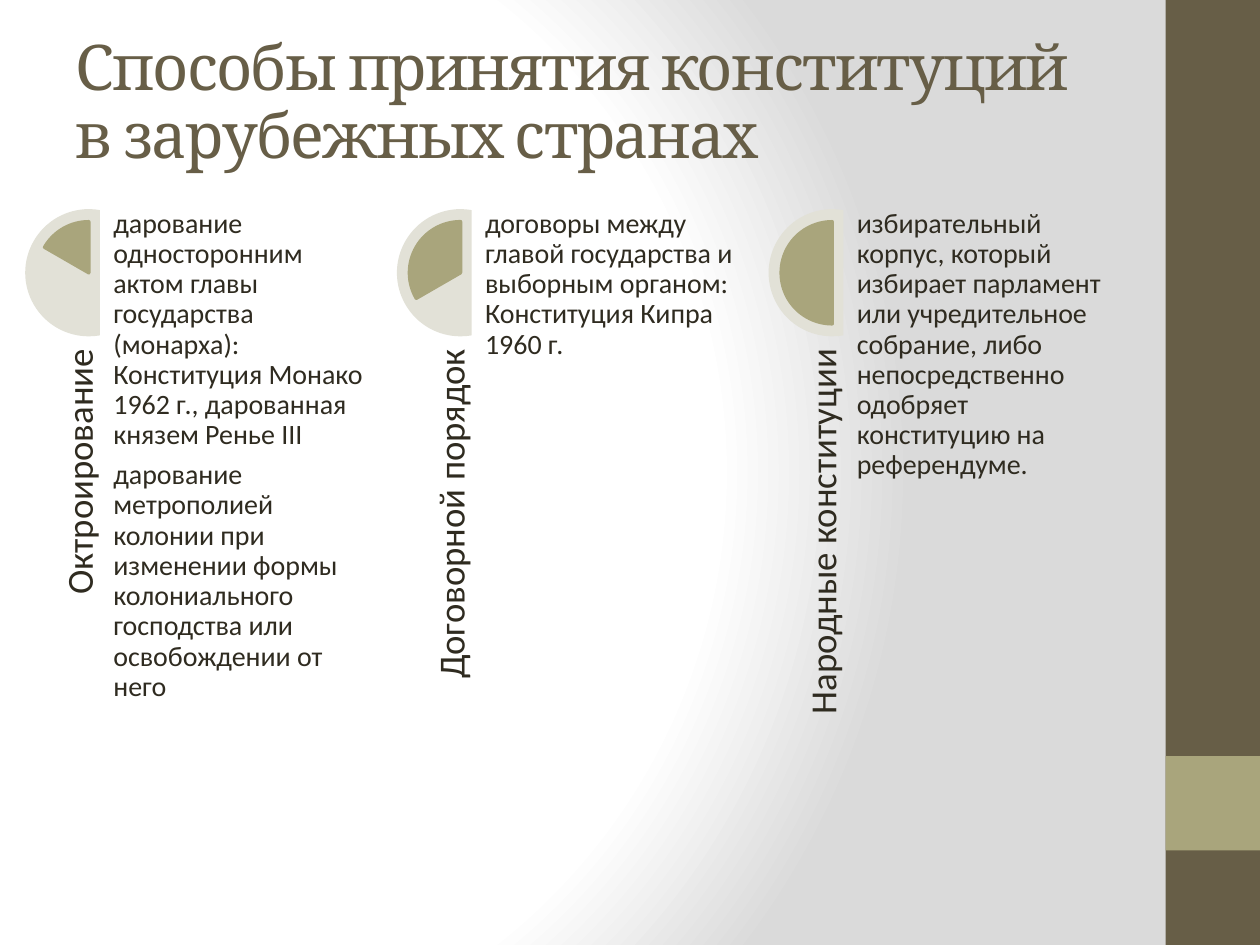
from dataclasses import dataclass

from pptx import Presentation
from pptx.dml.color import RGBColor as RGB
from pptx.enum.shapes import MSO_SHAPE as SHAPE
from pptx.enum.text import MSO_ANCHOR as ANCHOR, PP_ALIGN as ALIGN
from pptx.oxml import parse_xml
from pptx.oxml.ns import nsdecls
from pptx.util import Inches, Pt


@dataclass(frozen=True)
class Theme:
    dark: str = "675E47"
    accent: str = "A9A57C"
    pale: str = "E2E1D7"
    ink: str = "2F2B20"
    bg_stops: tuple = ((0, "FFFFFF"), (75, "FFFFFF"), (100, "DADADA"))
    head_font: str = "Cambria"
    body_font: str = "Calibri"
    title_size: int = 36
    label_size: int = 21
    body_size: int = 16
    leading: float = 0.9
    after: float = 0.35


class Deck:
    """Draws styled elements on the current slide."""

    def __init__(self, theme):
        self.theme = theme
        self.prs = Presentation()
        self.prs.slide_width, self.prs.slide_height = Inches(10), Inches(7.5)
        self.s = None

    def add_slide(self):
        self.s = self.prs.slides.add_slide(self.prs.slide_layouts[6])

    def background(self):
        stops = "".join(
            f'<a:gs pos="{pos * 1000}"><a:srgbClr val="{color}"/></a:gs>'
            for pos, color in self.theme.bg_stops
        )
        bg = parse_xml(
            f'<p:bg {nsdecls("p", "a")}><p:bgPr><a:gradFill rotWithShape="1">'
            f'<a:gsLst>{stops}</a:gsLst><a:path path="circle">'
            '<a:fillToRect l="20000" t="50000" r="100000" b="50000"/></a:path>'
            '</a:gradFill><a:effectLst/></p:bgPr></p:bg>'
        )
        self.s.element.cSld.insert(0, bg)

    def shape(self, kind, box, fill, adj=(), line=None):
        sp = self.s.shapes.add_shape(kind, *map(Inches, box))
        sp.shadow.inherit = False
        sp.fill.solid()
        sp.fill.fore_color.rgb = RGB.from_string(fill)
        for i, value in enumerate(adj):
            sp.adjustments[i] = value
        if line:
            sp.line.color.rgb = RGB.from_string(line)
            sp.line.width = Pt(2)
        else:
            sp.line.fill.background()

    def text(self, box, paragraphs, font, size, color, anchor=ANCHOR.TOP,
             align=ALIGN.LEFT, insets=(0, 0, 0, 0), rotation=0, spacing=0):
        sp = self.s.shapes.add_textbox(*map(Inches, box))
        sp.rotation = rotation
        tf = sp.text_frame
        frame = {"word_wrap": True, "vertical_anchor": anchor}
        sides = ("left", "top", "right", "bottom")
        frame |= {f"margin_{side}": Inches(v) for side, v in zip(sides, insets)}
        self.apply(tf, frame)
        for i, content in enumerate(paragraphs):
            p = tf.add_paragraph() if i else tf.paragraphs[0]
            p.text = content
            self.apply(p, {"alignment": align, "line_spacing": self.theme.leading,
                           "space_after": Pt(self.theme.after * size)})
            for r in p.runs:
                self.apply(r.font, {"name": font, "size": Pt(size)})
                r.font.color.rgb = RGB.from_string(color)
                if spacing:
                    r.font._element.set("spc", str(spacing * 100))

    @staticmethod
    def apply(target, values):
        for name, value in values.items():
            setattr(target, name, value)

    def title(self, content):
        t = self.theme
        self.text((0.5, 0.3, 8.33, 1.25), [content], t.head_font, t.title_size,
                  t.dark, ANCHOR.MIDDLE, insets=(0.1, 0.05, 0.1, 0.25), spacing=-1)

    def sidebar(self):
        self.shape(SHAPE.RECTANGLE, (9.25, 0, 0.75, 7.5), self.theme.dark)
        self.shape(SHAPE.RECTANGLE, (9.25, 6, 0.75, 0.75), self.theme.accent)

    def method_column(self, left, pie_start, label, paragraphs):
        t = self.theme
        self.shape(SHAPE.CHORD, (left, 1.66, 1.01, 1.01), t.pale, (48, 168))
        self.shape(SHAPE.PIE, (left + 0.1, 1.76, 0.81, 0.81), t.accent,
                   (pie_start, 162), t.accent)
        self.text((left - 1.17, 3.93, 2.93, 0.61), [label], t.body_font,
                  t.label_size, t.ink, ANCHOR.BOTTOM, ALIGN.RIGHT, rotation=270)
        self.text((left + 0.7, 1.66, 2.02, 4.04), paragraphs, t.body_font,
                  t.body_size, t.ink)


METHODS = [
    ("Октроирование", [
        "дарование односторонним актом главы государства (монарха): "
        "Конституция Монако 1962 г., дарованная князем Ренье III",
        "дарование метрополией колонии при изменении формы колониального "
        "господства или освобождении от него",
    ]),
    ("Договорной порядок", [
        "договоры между главой государства и выборным органом: "
        "Конституция Кипра 1960 г.",
    ]),
    ("Народные конституции", [
        "избирательный корпус, который избирает парламент или учредительное "
        "собрание, либо непосредственно одобряет конституцию на референдуме.",
    ]),
]


def main():
    deck = Deck(Theme())
    deck.add_slide()
    deck.background()
    deck.sidebar()
    deck.title("Способы принятия конституций \vв зарубежных странах")
    for i, (label, paragraphs) in enumerate(METHODS):
        deck.method_column(0.2 + 2.95 * i, 126 - 36 * i, label, paragraphs)
    deck.prs.save("out.pptx")


if __name__ == "__main__":
    main()
